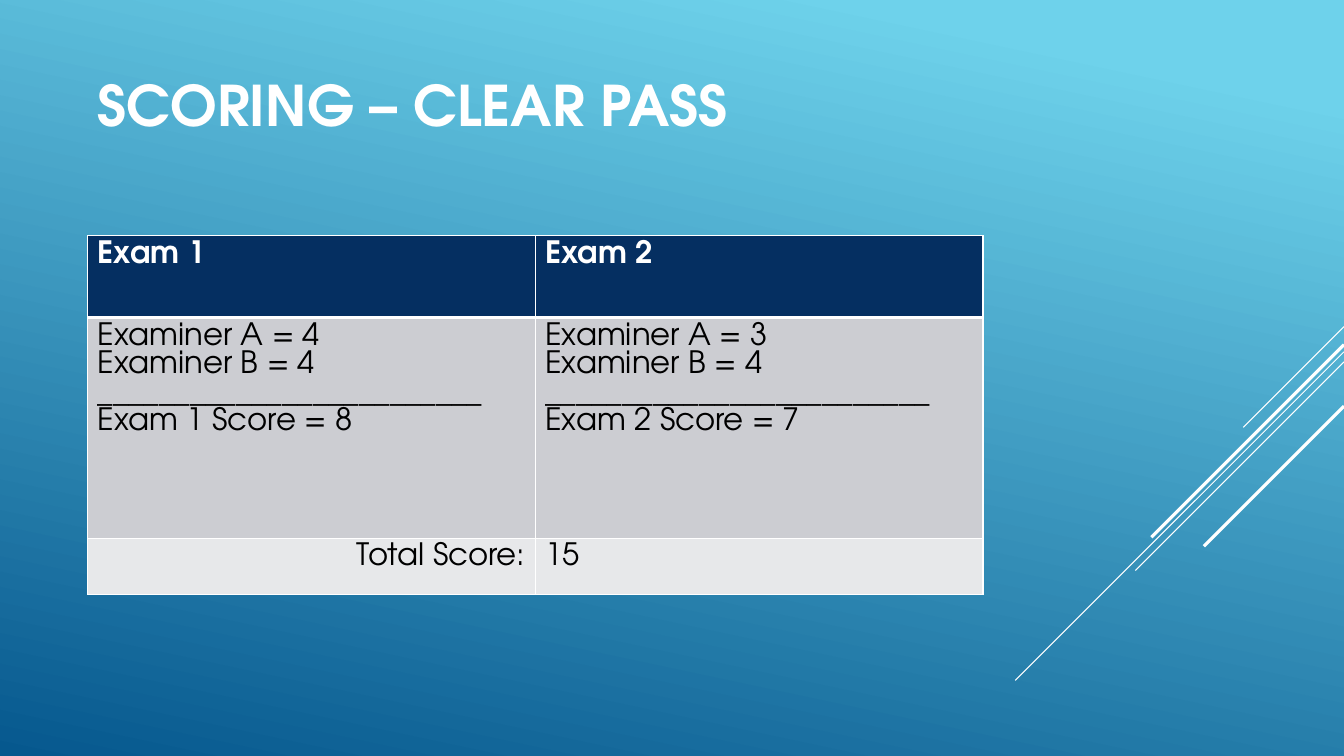
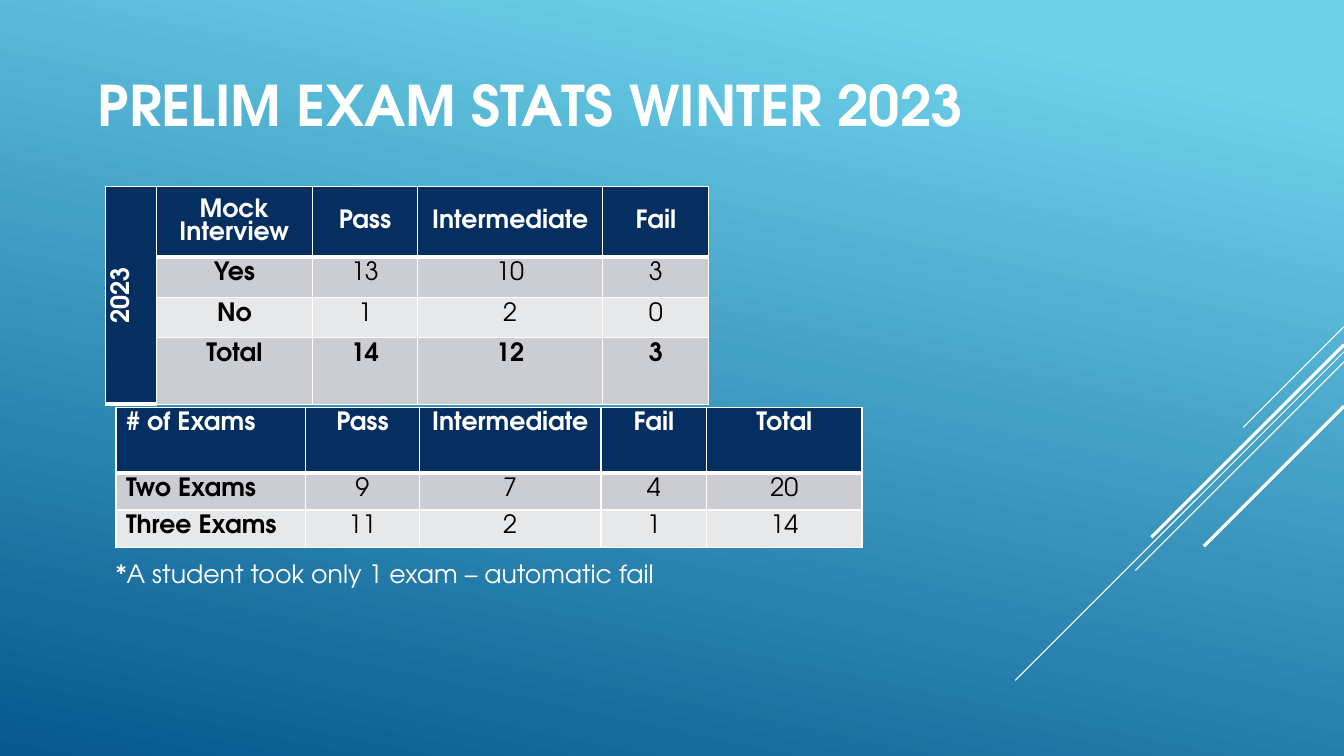
import pptx
import pptx.util
import pptx.dml.color
import pptx.enum.shapes
import pptx.enum.text
import pptx.oxml

Inches, Pt = pptx.util.Inches, pptx.util.Pt
RGBColor = pptx.dml.color.RGBColor
ALIGN = pptx.enum.text.PP_ALIGN
MIDDLE = pptx.enum.text.MSO_ANCHOR.MIDDLE

WHITE = RGBColor(0xFF, 0xFF, 0xFF)
BLACK = RGBColor(0, 0, 0)
NAVY = RGBColor(0x05, 0x2F, 0x61)
BANDS = RGBColor(0xCC, 0xCD, 0xD2), RGBColor(0xE7, 0xE8, 0xEA)
SKY = RGBColor(0x6E, 0xD2, 0xEB)
DEEP = RGBColor(0x06, 0x58, 0x8E)
FONT = "TeX Gyre Adventor"
NS = 'xmlns:a="http://schemas.openxmlformats.org/drawingml/2006/main"'
WIDE, HIGH = 13.33, 7.5

RAYS = [(3.24, 1, 0.75), (3.49, 3.26, 0.75), (3.59, 2.07, 0.75),
        (3.42, 1.91, 2.25), (4.03, 1.39, 2.25)]

RULE = "_" * 25
SCORE = dict(
    at=(0.87, 2.34), cols=[4.44, 4.44], rows=[0.81, 2.19, 0.56], size=22,
    bold=[], align=ALIGN.LEFT,
    cells=[["Exam 1", "Exam 2"],
           [f"Examiner A = 4\nExaminer B = 4\n{RULE}\nExam 1 Score = 8",
            f"Examiner A = 3\nExaminer B = 4\n{RULE}\nExam 2 Score = 7"],
           ["Total Score:", "15"]])
MOCK = dict(
    at=(1.05, 1.85), cols=[0.5, 1.55, 1.04, 1.84, 1.05],
    rows=[0.7, 0.4, 0.4, 0.66], size=18, bold=[0, 1], align=ALIGN.CENTER,
    cells=[["2023", "Mock Interview", "Pass", "Intermediate", "Fail"],
           ["", "Yes", "13", "10", "3"],
           ["", "No", "1", "2", "0"],
           ["", "Total", "14", "12", "3"]])
COUNT = dict(
    at=(1.15, 4.04), cols=[1.88, 1.13, 1.8, 1.05, 1.54],
    rows=[0.65, 0.37, 0.37], size=18, bold=[0], align=ALIGN.CENTER,
    cells=[["# of Exams", "Pass", "Intermediate", "Fail", "Total"],
           ["Two Exams", "9", "7", "4", "20"],
           ["Three Exams", "11", "2", "1", "14"]])
NOTE = "*A student took only 1 exam – automatic fail"


def style(frame, size, color, bold=False, align=ALIGN.LEFT):
    for para in frame.paragraphs:
        para.alignment = align
        for run in para.runs:
            font = run.font
            font.name, font.size, font.bold = FONT, Pt(size), bold
            font.color.rgb = color


def edge(cell, top, low):
    props = cell._tc.get_or_add_tcPr()
    for spot, (side, wide) in enumerate(zip("LRTB", (1, 1, top, low))):
        props.insert(spot, pptx.oxml.parse_xml(
            f'<a:ln{side} {NS} w="{Pt(wide)}"><a:solidFill>'
            f'<a:srgbClr val="{WHITE}"/></a:solidFill></a:ln{side}>'))


def grid(slide, data):
    cols, rows = data["cols"], data["rows"]
    x, y = data["at"]
    table = slide.shapes.add_table(
        len(rows), len(cols), Inches(x), Inches(y),
        Inches(sum(cols)), Inches(sum(rows))).table
    for col, wide in zip(table.columns, cols):
        col.width = Inches(wide)
    for row, high in zip(table.rows, rows):
        row.height = Inches(high)
    for r, line in enumerate(data["cells"]):
        for c, text in enumerate(line):
            cell = table.cell(r, c)
            cell.text_frame.text = text
            head = r == 0 or (data is MOCK and c == 0)
            cell.fill.solid()
            cell.fill.fore_color.rgb = NAVY if head else BANDS[(r - 1) % 2]
            edge(cell, 3 if r == 1 else 1, 3 if head else 1)
            bold = head or c in data["bold"] or line[1] == "Total"
            align = data["align"]
            if data is COUNT and c == 0:
                align = ALIGN.LEFT
            if text == "Total Score:":
                align = ALIGN.RIGHT
            style(cell.text_frame, data["size"], WHITE if head else BLACK,
                  bold, align)
            if data is MOCK and head:
                cell.vertical_anchor = MIDDLE
    return table


def decor(deck, slide):
    master = deck.slide_master
    fill = master.background.fill
    fill.gradient()
    fill.gradient_angle = 258
    for stop, spot, color in zip(fill.gradient_stops, (0.1, 1), (SKY, DEEP)):
        stop.position, stop.color.rgb = spot, color
    for y, span, wide in RAYS:
        ray = slide.shapes.add_connector(
            pptx.enum.shapes.MSO_CONNECTOR.STRAIGHT, Inches(WIDE), Inches(y),
            Inches(WIDE - span), Inches(y + span))
        ray.line.color.rgb, ray.line.width = WHITE, Pt(wide)
        ray._element.spPr.append(
            pptx.oxml.parse_xml(f"<a:effectLst {NS}/>"))
        master.shapes.element.append(ray._element)


def page(deck, text):
    slide = deck.slides.add_slide(deck.slide_layouts[5])
    title = slide.shapes.title
    title.left, title.top = Inches(0.87), Inches(0.21)
    title.width, title.height = Inches(9.33), Inches(1.65)
    title.text_frame.text = text
    title.text_frame.vertical_anchor = MIDDLE
    style(title.text_frame, 40, WHITE, True)
    return slide


def main():
    deck = pptx.Presentation()
    deck.slide_width, deck.slide_height = Inches(WIDE), Inches(HIGH)
    score = page(deck, "SCORING – CLEAR PASS")
    decor(deck, score)
    grid(score, SCORE)

    stats = page(deck, "PRELIM EXAM STATS WINTER 2023")
    mock = grid(stats, MOCK)
    year = mock.cell(0, 0)
    year.merge(mock.cell(3, 0))
    year._tc.get_or_add_tcPr().set("vert", "vert270")
    grid(stats, COUNT)
    note = stats.shapes.add_textbox(
        Inches(1.05), Inches(5.49), Inches(7.33), Inches(0.4)).text_frame
    note.word_wrap = True
    note.text = NOTE
    style(note, 18, WHITE)
    deck.save("out.pptx")


if __name__ == "__main__":
    main()
